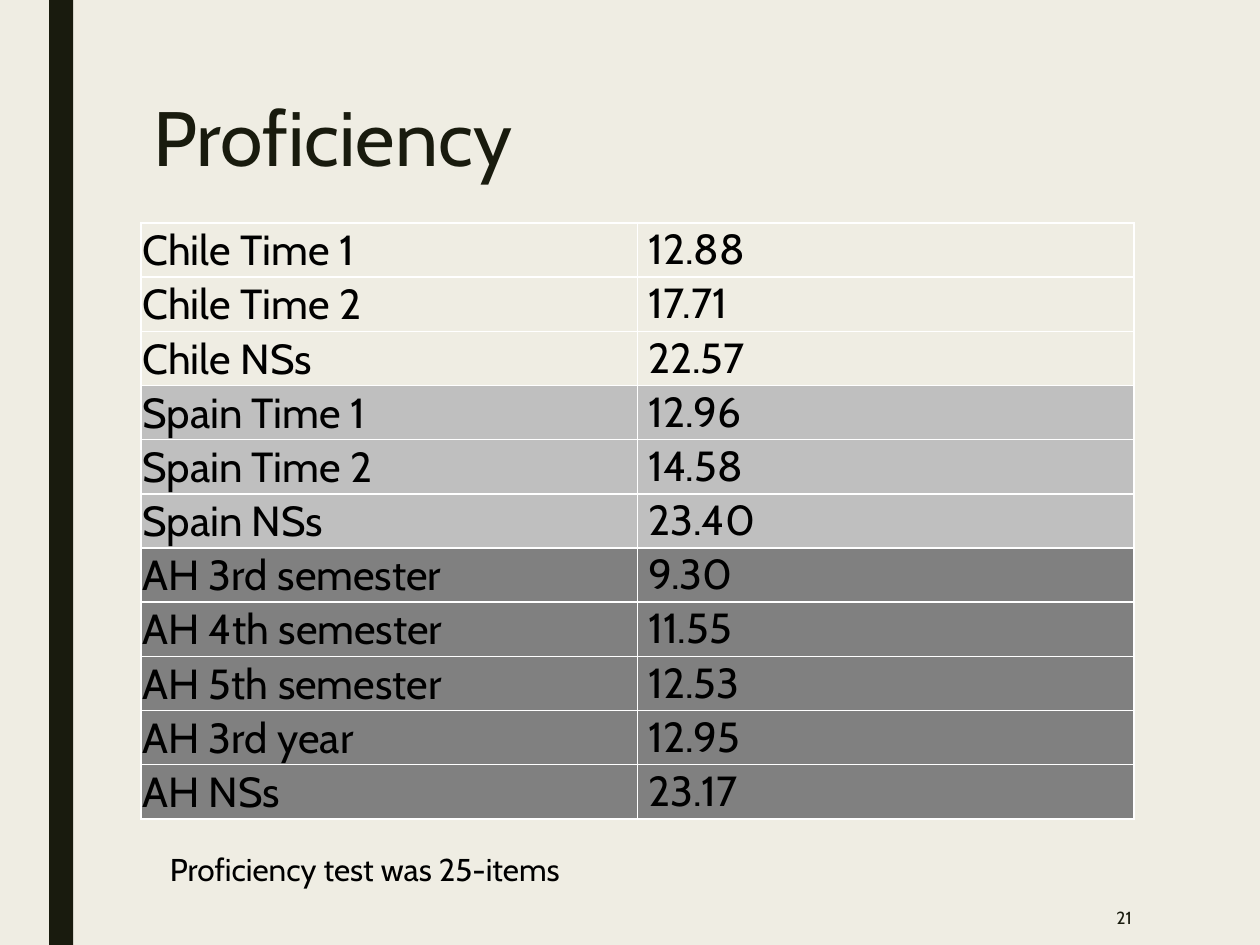
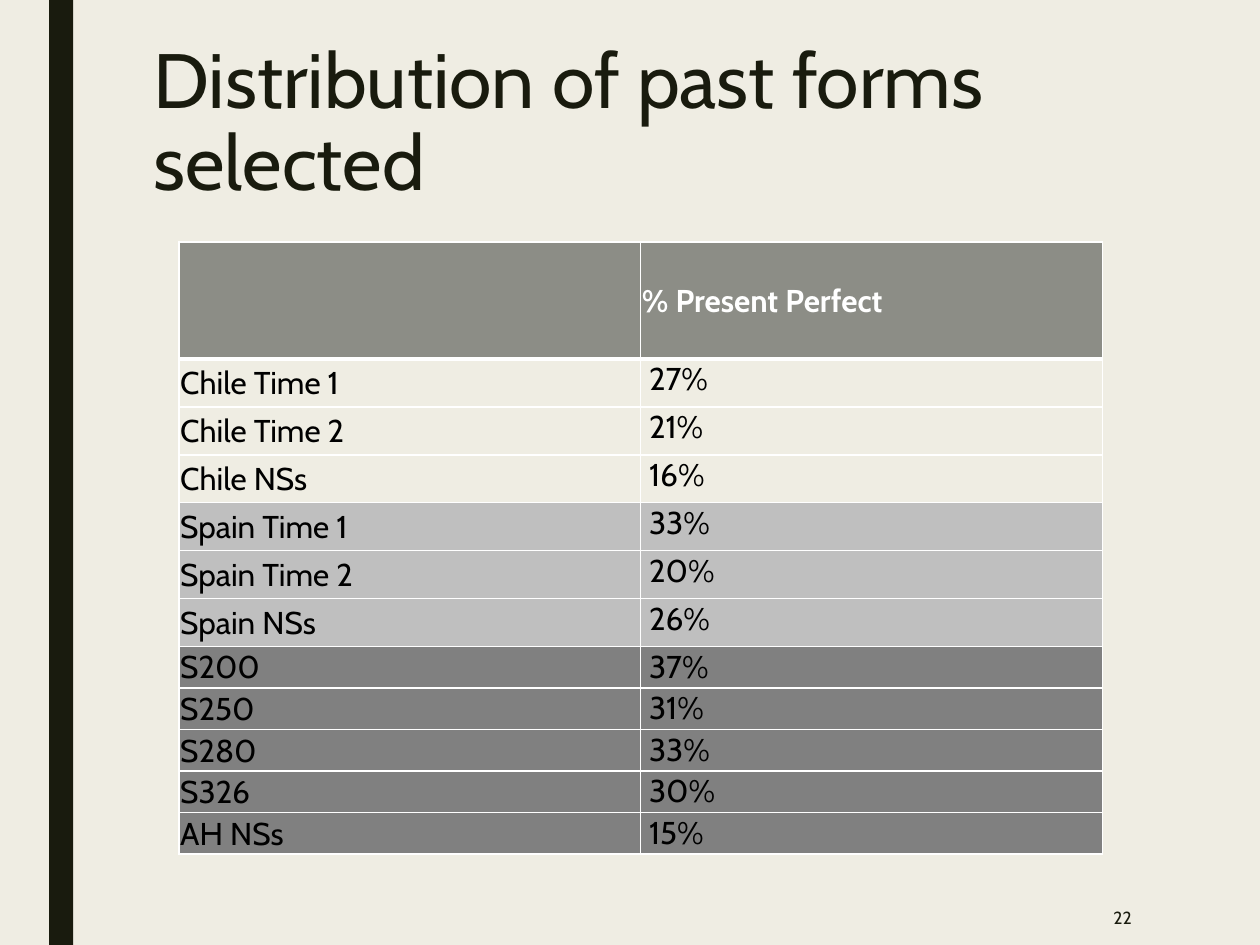
from lxml import etree
from pptx import Presentation
from pptx.dml.color import RGBColor
from pptx.enum import shapes, text
from pptx.oxml.ns import qn
from pptx.util import Inches, Pt

FONT = "Cabin"
PAPER, INK, BLACK, WHITE = "EFEDE3", "191B0E", "000000", "FFFFFF"
HEADER_FILL = "8C8D86"
GROUP_FILLS = {"Chile": PAPER, "Spain": "BFBFBF", "At home": "808080"}

# Content: rows are (label, value), gathered by learner group
SLIDES = [
    {
        "title": "Proficiency", "title_top": 0.75, "number": 21,
        "table_at": (1.12, 1.77), "width": 7.88, "size": 24,
        "header": None,
        "row_heights": {"Chile": 0.43, "Spain": 0.43, "At home": 0.43},
        "groups": {
            "Chile": [("Chile Time 1", "12.88"), ("Chile Time 2", "17.71"),
                      ("Chile NSs", "22.57")],
            "Spain": [("Spain Time 1", "12.96"), ("Spain Time 2", "14.58"),
                      ("Spain NSs", "23.40")],
            "At home": [("AH 3rd semester", "9.30"), ("AH 4th semester", "11.55"),
                        ("AH 5th semester", "12.53"), ("AH 3rd year", "12.95"),
                        ("AH NSs", "23.17")],
        },
        "note": "Proficiency test was 25-items",
    },
    {
        "title": "Distribution of past forms selected", "title_top": 0.29, "number": 22,
        "table_at": (1.42, 1.92), "width": 7.33, "size": 18,
        "header": ("", "% Present Perfect"), "header_height": 0.93,
        "row_heights": {"Chile": 0.38, "Spain": 0.38, "At home": 0.33},
        "groups": {
            "Chile": [("Chile Time 1", "27%"), ("Chile Time 2", "21%"),
                      ("Chile NSs", "16%")],
            "Spain": [("Spain Time 1", "33%"), ("Spain Time 2", "20%"),
                      ("Spain NSs", "26%")],
            "At home": [("S200", "37%"), ("S250", "31%"), ("S280", "33%"),
                        ("S326", "30%"), ("AH NSs", "15%")],
        },
        "note": None,
    },
]


def rgb(color):
    return RGBColor.from_string(color)


def style(paragraph, size, color, bold=False):
    font = paragraph.font
    font.name, font.size, font.bold = FONT, Pt(size), bold
    font.color.rgb = rgb(color)


def add_text(slide, words, at, size, color=INK, anchor=text.MSO_ANCHOR.TOP):
    frame = slide.shapes.add_textbox(*map(Inches, at)).text_frame
    frame.word_wrap = True
    frame.vertical_anchor = anchor
    paragraph = frame.paragraphs[0]
    paragraph.text = words
    style(paragraph, size, color)
    return paragraph


def add_borders(cell, top=1, bottom=1):
    props = cell._tc.get_or_add_tcPr()
    widths = {"lnL": 1, "lnR": 1, "lnT": top, "lnB": bottom}
    for place, (side, width) in enumerate(widths.items()):
        line = etree.Element(qn(f"a:{side}"), w=str(Pt(width)))
        fill = etree.SubElement(line, qn("a:solidFill"))
        etree.SubElement(fill, qn("a:srgbClr"), val=WHITE)
        props.insert(place, line)


def fill_cell(cell, words, size, color, fill, middle, bold=False):
    cell.margin_left = cell.margin_top = cell.margin_right = Inches(0.01)
    cell.margin_bottom = 0
    cell.vertical_anchor = text.MSO_ANCHOR.MIDDLE if middle else text.MSO_ANCHOR.TOP
    cell.fill.solid()
    cell.fill.fore_color.rgb = rgb(fill)
    paragraph = cell.text_frame.paragraphs[0]
    paragraph.text = words
    style(paragraph, size, color, bold)


def add_scores(slide, content):
    # Each row: its two texts, height, fill and whether it is the header
    rows = []
    if content["header"]:
        rows.append((content["header"], content["header_height"], HEADER_FILL, True))
    for group, scores in content["groups"].items():
        for label, score in scores:
            rows.append(((label, f" {score}"), content["row_heights"][group],
                         GROUP_FILLS[group], False))

    left, top = content["table_at"]
    height = sum(row[1] for row in rows)
    table = slide.shapes.add_table(len(rows), 2, Inches(left), Inches(top),
                                   Inches(content["width"]), Inches(height)).table
    table.first_row = bool(content["header"])
    table.horz_banding = False
    below_header = False
    for r, (words, row_height, fill, is_header) in enumerate(rows):
        table.rows[r].height = Inches(row_height)
        for c, cell_words in enumerate(words):
            cell = table.cell(r, c)
            fill_cell(cell, cell_words, content["size"], WHITE if is_header else BLACK,
                      fill, middle=is_header or c == 0, bold=is_header)
            add_borders(cell, top=3 if below_header else 1, bottom=3 if is_header else 1)
        below_header = is_header


def build_slide(deck, content):
    slide = deck.slides.add_slide(deck.slide_layouts[6])
    slide.background.fill.solid()
    slide.background.fill.fore_color.rgb = rgb(PAPER)

    # Side band
    band = slide.shapes.add_shape(shapes.MSO_SHAPE.RECTANGLE, Inches(0.39), 0,
                                  Inches(0.19), deck.slide_height)
    band.shadow.inherit = False
    band.fill.solid()
    band.fill.fore_color.rgb = rgb(INK)
    band.line.fill.background()

    # Title, table, note and slide number
    title = add_text(slide, content["title"], (1.12, content["title_top"], 7.88, 1.62), 44)
    title.line_spacing = 0.89
    add_scores(slide, content)
    if content["note"]:
        add_text(slide, content["note"], (1.25, 6.7, 6.99, 0.4), 18, BLACK)
    number = add_text(slide, str(content["number"]), (7.77, 7.06, 1.31, 0.44), 10,
                      anchor=text.MSO_ANCHOR.MIDDLE)
    number.alignment = text.PP_ALIGN.RIGHT


def main():
    deck = Presentation()
    deck.slide_width, deck.slide_height = Inches(10), Inches(7.5)
    for content in SLIDES:
        build_slide(deck, content)
    deck.save("out.pptx")


if __name__ == "__main__":
    main()
